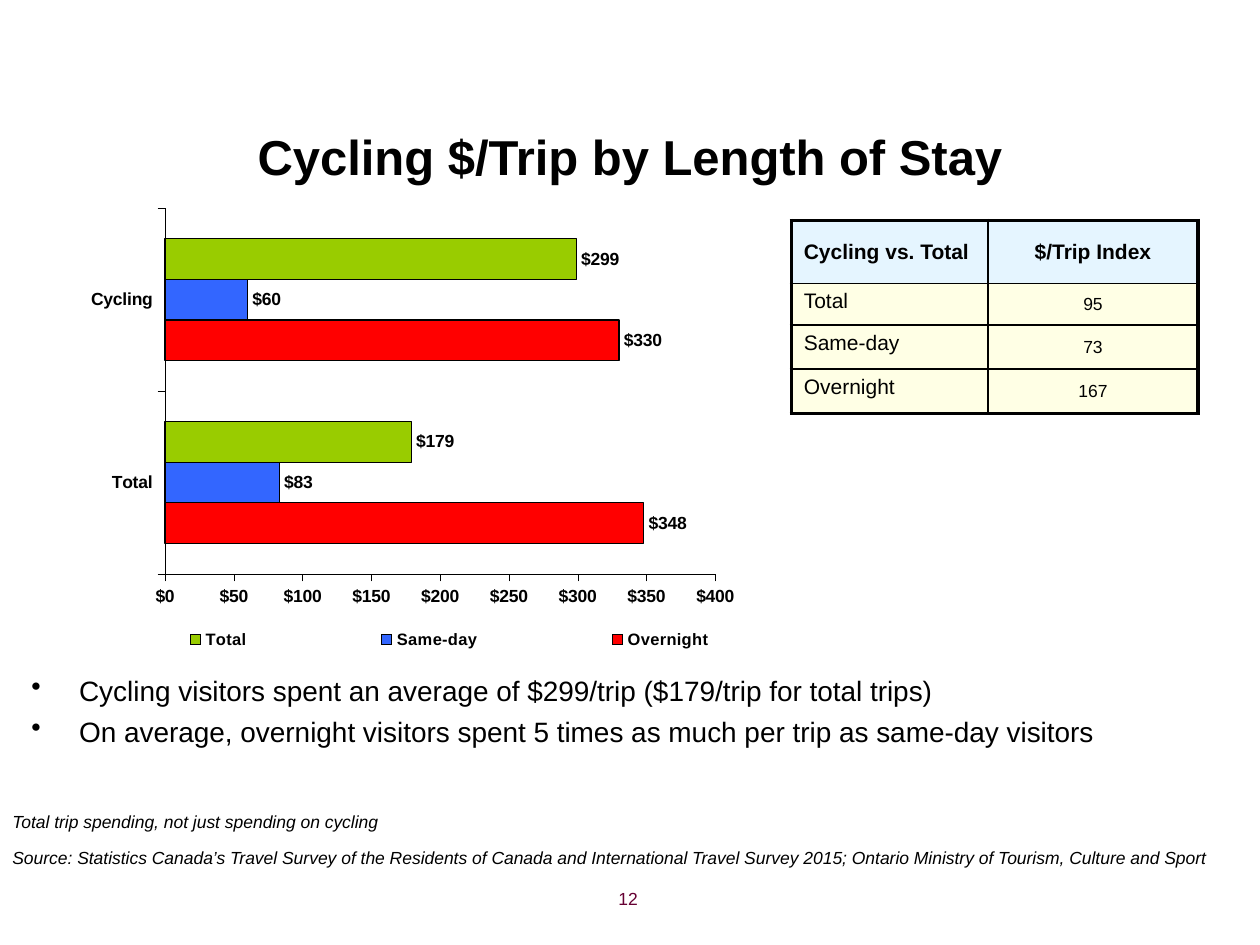
from dataclasses import dataclass

from lxml.etree import SubElement
from pptx import Presentation
from pptx.chart.data import CategoryChartData
from pptx.dml.color import RGBColor
from pptx.enum.chart import XL_CHART_TYPE, XL_LABEL_POSITION, XL_LEGEND_POSITION, XL_TICK_MARK
from pptx.enum.text import MSO_ANCHOR, PP_ALIGN
from pptx.oxml import parse_xml
from pptx.oxml.ns import nsdecls, qn
from pptx.util import Pt

PX = 9144  # 100 px to the inch


@dataclass(frozen=True)
class Theme:
    font: str = "Arial"
    ink: str = "000000"
    plum: str = "660033"
    red: str = "FF0000"
    blue: str = "3366FF"
    green: str = "99CC00"
    head: str = "CCECFF"
    body: str = "FFFFCC"
    title: float = 28
    text: float = 16
    cell: float = 12
    small: float = 10
    key: float = 9.4


T = Theme()


def px(*vals):
    return [v * PX for v in vals]


def style(font, size, color=T.ink, bold=False, italic=False):
    font.name, font.size = T.font, Pt(size)
    font.bold, font.italic = bold, italic
    font.color.rgb = RGBColor.from_string(color)


def write(slide, box, text, size, align=PP_ALIGN.LEFT, anchor=MSO_ANCHOR.TOP, **look):
    frame = slide.shapes.add_textbox(*px(*box)).text_frame
    frame.word_wrap = True
    frame.vertical_anchor = anchor
    para = frame.paragraphs[0]
    para.text, para.alignment = text, align
    style(para.font, size, **look)


def add_list(slide, box, lines):
    frame = slide.shapes.add_textbox(*px(*box)).text_frame
    frame.word_wrap = True
    for i, line in enumerate(lines):
        para = frame.add_paragraph() if i else frame.paragraphs[0]
        para.text, para.line_spacing = line, 0.8
        if i:
            para.space_before = Pt(T.text / 2)
        # Hanging bullet
        props = para._p.get_or_add_pPr()
        props.set("marL", str(38 * PX))
        props.set("indent", str(-38 * PX))
        SubElement(props, qn("a:buChar"), char="•")
        style(para.font, T.text)


def lay_out(parent, index, inner=False, **place):
    old = parent.find(qn("c:layout"))
    if old is not None:
        parent.remove(old)
    target = '<c:layoutTarget val="inner"/>' if inner else ""
    modes = "".join(f'<c:{k}Mode val="edge"/>' for k in "xy")
    sizes = "".join(f'<c:{k} val="{v}"/>' for k, v in place.items())
    parent.insert(index, parse_xml(
        f'<c:layout {nsdecls("c")}><c:manualLayout>{target}{modes}{sizes}'
        "</c:manualLayout></c:layout>"))


def draw_line(line, width):
    line.color.rgb = RGBColor.from_string(T.ink)
    line.width = Pt(width)


def add_bars(slide, box, cats, rows):
    data = CategoryChartData(number_format=r"\$#,##0")
    data.categories = cats
    for name, vals, _ in rows:
        data.add_series(name, vals)
    chart = slide.shapes.add_chart(XL_CHART_TYPE.BAR_CLUSTERED, *px(*box), data).chart
    chart.has_title = False
    style(chart.font, T.small, bold=True)

    # Bars and their labels
    plot = chart.plots[0]
    plot.gap_width, plot.overlap, plot.vary_by_categories = 150, 0, False
    for bar, (_, _, color) in zip(plot.series, rows):
        bar.format.fill.solid()
        bar.format.fill.fore_color.rgb = RGBColor.from_string(color)
        draw_line(bar.format.line, 0.73)
        bar.invert_if_negative = False
        tags = bar.data_labels
        tags.show_value, tags.position = True, XL_LABEL_POSITION.OUTSIDE_END
        tags.number_format, tags.number_format_is_linked = r"\$#,##0", False
        style(tags.font, T.small, bold=True)

    # Axes
    for axis in (chart.category_axis, chart.value_axis):
        axis.has_major_gridlines = False
        axis.major_tick_mark, axis.minor_tick_mark = XL_TICK_MARK.OUTSIDE, XL_TICK_MARK.NONE
        draw_line(axis.format.line, 0.18)
        style(axis.tick_labels.font, T.small, bold=True)
    scale = chart.value_axis
    scale.minimum_scale, scale.maximum_scale, scale.major_unit = 0, 400, 50
    scale.tick_labels.number_format = r"\$#,##0"
    scale.tick_labels.number_format_is_linked = False

    # Legend and plot places
    chart.has_legend = True
    chart.legend.position = XL_LEGEND_POSITION.BOTTOM
    chart.legend.include_in_layout = False
    style(chart.legend.font, T.key, bold=True)
    root = chart.element.find(qn("c:chart"))
    lay_out(root.find(qn("c:plotArea")), 0, inner=True, x=0.17, y=0.02, w=0.58, h=0.78)
    lay_out(root.find(qn("c:legend")), 1, x=0.06, y=0.9, w=0.82, h=0.08)


def edge(cell, thick):
    props = cell._tc.get_or_add_tcPr()
    for i, side in enumerate("LRTB"):
        width = Pt(2.25 if side in thick else 1)
        props.insert(i, parse_xml(
            f'<a:ln{side} {nsdecls("a")} w="{width}"><a:solidFill>'
            f'<a:srgbClr val="{T.ink}"/></a:solidFill></a:ln{side}>'))


def add_grid(slide, box, cols, heights, rows):
    grid = slide.shapes.add_table(len(rows), len(cols), *px(*box)).table
    for col, width in zip(grid.columns, cols):
        col.width = width * PX
    for r, (height, row) in enumerate(zip(heights, rows)):
        grid.rows[r].height = height * PX
        for c, text in enumerate(row):
            cell = grid.cell(r, c)
            top, value = r == 0, r > 0 and c == 1
            cell.fill.solid()
            cell.fill.fore_color.rgb = RGBColor.from_string(T.head if top else T.body)
            tint = cell._tc.tcPr.find(".//" + qn("a:srgbClr"))
            SubElement(tint, qn("a:alpha"), val="50000")
            edge(cell, ("R" if c else "L") + ("T" if top else "")
                 + ("B" if r == len(rows) - 1 else ""))
            cell.vertical_anchor = MSO_ANCHOR.MIDDLE if top or c else MSO_ANCHOR.TOP
            if value:
                cell.margin_left = cell.margin_right = cell.margin_top = PX
                cell.margin_bottom = 0
            para = cell.text_frame.paragraphs[0]
            para.text = text
            para.alignment = PP_ALIGN.CENTER if c else PP_ALIGN.LEFT
            style(para.font, T.small if value else T.cell, bold=top)


def main():
    deck = Presentation()
    deck.slide_width, deck.slide_height = px(1000, 750)
    slide = deck.slides.add_slide(deck.slide_layouts[6])

    write(slide, (50, 86, 900, 75), "Cycling $/Trip by Length of Stay", T.title,
          PP_ALIGN.CENTER, MSO_ANCHOR.MIDDLE, bold=True)
    add_list(slide, (15, 535, 950, 100), [
        "Cycling visitors spent an average of $299/trip ($179/trip for total trips)",
        "On average, overnight visitors spent 5 times as much per trip as same-day visitors",
    ])
    add_bars(slide, (3, 158, 753, 372), ["Total", "Cycling"], [
        ("Overnight", (348, 330), T.red),
        ("Same-day", (83, 60), T.blue),
        ("Total", (179, 299), T.green),
    ])
    add_grid(slide, (628, 175, 323, 153), (156, 167), (50, 33, 35, 35), [
        ("Cycling vs. Total", "$/Trip Index"),
        ("Total", "95"),
        ("Same-day", "73"),
        ("Overnight", "167"),
    ])

    # Notes and page number
    notes = (
        "Total trip spending, not just spending on cycling",
        "Source: Statistics Canada’s Travel Survey of the Residents of Canada and "
        "International Travel Survey 2015; Ontario Ministry of Tourism, Culture and Sport",
    )
    for i, note in enumerate(notes):
        write(slide, (0, 639 + 28 * i, 980, 27), note, T.small, italic=True)
    write(slide, (283, 700, 233, 35), "12", T.small, PP_ALIGN.RIGHT, color=T.plum)

    deck.save("out.pptx")


if __name__ == "__main__":
    main()
